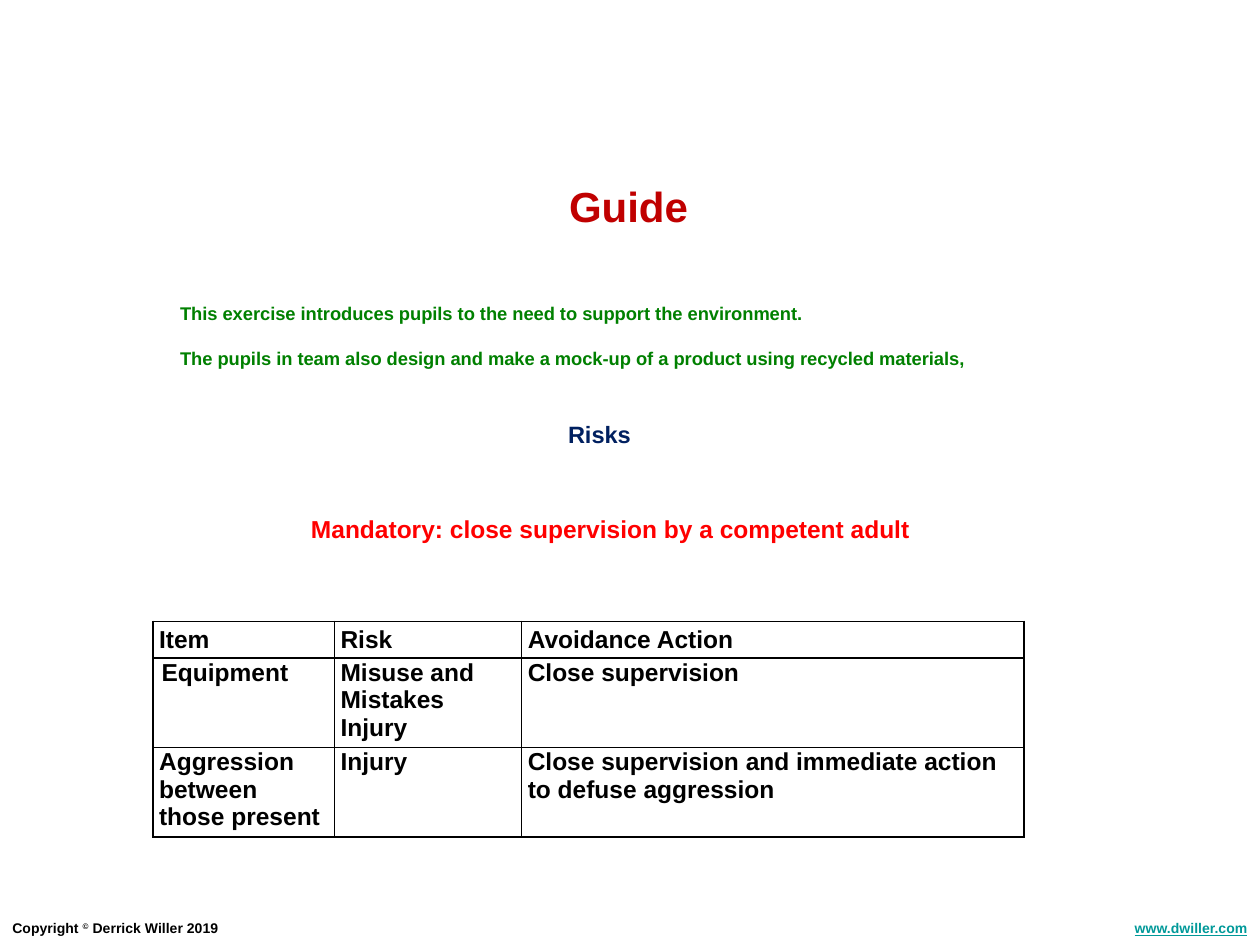
from dataclasses import dataclass, field
from typing import Any

from lxml import etree
from pptx import Presentation
from pptx import util as u
from pptx.dml import color
from pptx.enum import text
from pptx.oxml import ns

HUES = {
    "ink": "000000", "link": "009999", "title": "C00000",
    "body": "008000", "head": "002060", "alert": "FF0000",
}
FACE = {"name": "Arial", "bold": True}
GAP = 13


@dataclass
class Piece:
    words: str
    hue: str = "ink"
    line: bool = False
    base: int = 0


@dataclass
class Label:
    spot: tuple[float, float, float, float]
    size: float
    paras: list[list[Piece]]
    wrap: bool = True
    right: bool = False


@dataclass
class Cell:
    words: str
    left: float = 3.6


@dataclass
class Grid:
    spot: tuple[float, float]
    cols: list[float]
    rows: list[float]
    cells: list[list[Cell]] = field(default_factory=list)


TITLE = Label((318, 99.4, 83, 36), 24, [[Piece("Guide", "title")]], wrap=False)
LABELS = [
    Label((0, 522, 407, 17), 8, [[
        Piece("Copyright "), Piece("©", base=30000), Piece(" Derrick Willer 2019"),
    ]]),
    Label((623.5, 522, 96.5, 17), 8, [[Piece("www.dwiller.com", "link", True)]], right=True),
    Label((95.8, 169.2, 481.7, 45.4), 10.5, [
        [Piece("This exercise introduces pupils to the need to support the environment.", "body")],
        [Piece("The pupils in team also design and make a mock-up of a product "
               "using recycled materials,", "body")],
    ]),
    Label((317.5, 236.2, 51, 24), 13.5, [[Piece("Risks", "head")]], wrap=False),
    Label((170.6, 290.2, 358, 24.5), 14,
          [[Piece("Mandatory: close supervision by a competent adult", "alert")]], wrap=False),
]
RISKS = Grid((87.3, 355), [103.7, 107, 287.3], [21, 51, 51], [
    [Cell("Item"), Cell("Risk"), Cell("Avoidance Action")],
    [Cell("Equipment", 5), Cell("Misuse and Mistakes\nInjury"), Cell("Close supervision")],
    [Cell("Aggression between those present"), Cell("Injury"),
     Cell("Close supervision and immediate action to defuse aggression")],
])


def apply(item: Any, form: dict[str, Any]) -> None:
    for key, value in form.items():
        setattr(item, key, value)


def style(font: Any, size: float, hue: str = "ink") -> None:
    apply(font, FACE | {"size": u.Pt(size)})
    font.color.rgb = color.RGBColor.from_string(HUES[hue])


def write(shape: Any, label: Label) -> None:
    keys = ("left", "top", "width", "height")
    apply(shape, dict(zip(keys, map(u.Pt, label.spot))))
    frame = shape.text_frame
    apply(frame, {
        "word_wrap": label.wrap,
        "auto_size": text.MSO_AUTO_SIZE.SHAPE_TO_FIT_TEXT,
        "vertical_anchor": text.MSO_ANCHOR.TOP,
    })
    side = text.PP_ALIGN.RIGHT if label.right else text.PP_ALIGN.LEFT
    for at, pieces in enumerate(label.paras):
        para = frame.add_paragraph() if at else frame.paragraphs[0]
        apply(para, {"alignment": side, "space_before": u.Pt(GAP if at else 0)})
        for piece in pieces:
            run = para.add_run()
            run.text = piece.words
            style(run.font, label.size, piece.hue)
            if piece.line:
                run.font.underline = True
            if piece.base:
                run.font._element.set("baseline", str(piece.base))


def border(cell: Any) -> None:
    props = cell._tc.get_or_add_tcPr()
    for at, side in enumerate(("lnL", "lnR", "lnT", "lnB")):
        line = etree.Element(ns.qn(f"a:{side}"), w=str(u.Pt(1)))
        fill = etree.SubElement(line, ns.qn("a:solidFill"))
        etree.SubElement(fill, ns.qn("a:srgbClr"), val=HUES["ink"])
        props.insert(at, line)


def draw(slide: Any, grid: Grid) -> None:
    area = map(u.Pt, (*grid.spot, sum(grid.cols), sum(grid.rows)))
    table = slide.shapes.add_table(len(grid.rows), len(grid.cols), *area).table
    apply(table, {"first_row": False, "horz_banding": False})
    for col, width in zip(table.columns, grid.cols):
        col.width = u.Pt(width)
    for r, (row, high) in enumerate(zip(table.rows, grid.rows)):
        row.height = u.Pt(high)
        for cell, data in zip(row.cells, grid.cells[r]):
            apply(cell, {
                "text": data.words,
                "margin_left": u.Pt(data.left),
                "margin_right": u.Pt(3.6),
                "margin_top": u.Pt(0.7),
                "margin_bottom": u.Pt(0),
                "vertical_anchor": text.MSO_ANCHOR.TOP if r else text.MSO_ANCHOR.MIDDLE,
            })
            cell.fill.background()
            border(cell)
            for para in cell.text_frame.paragraphs:
                for run in para.runs:
                    style(run.font, 14)


def main() -> None:
    deck = Presentation()
    apply(deck, {"slide_width": u.Pt(720), "slide_height": u.Pt(540)})
    slide = deck.slides.add_slide(deck.slide_layouts[5])
    write(slide.shapes.title, TITLE)
    for label in LABELS:
        write(slide.shapes.add_textbox(*map(u.Pt, label.spot)), label)
    draw(slide, RISKS)
    deck.save("out.pptx")


if __name__ == "__main__":
    main()
